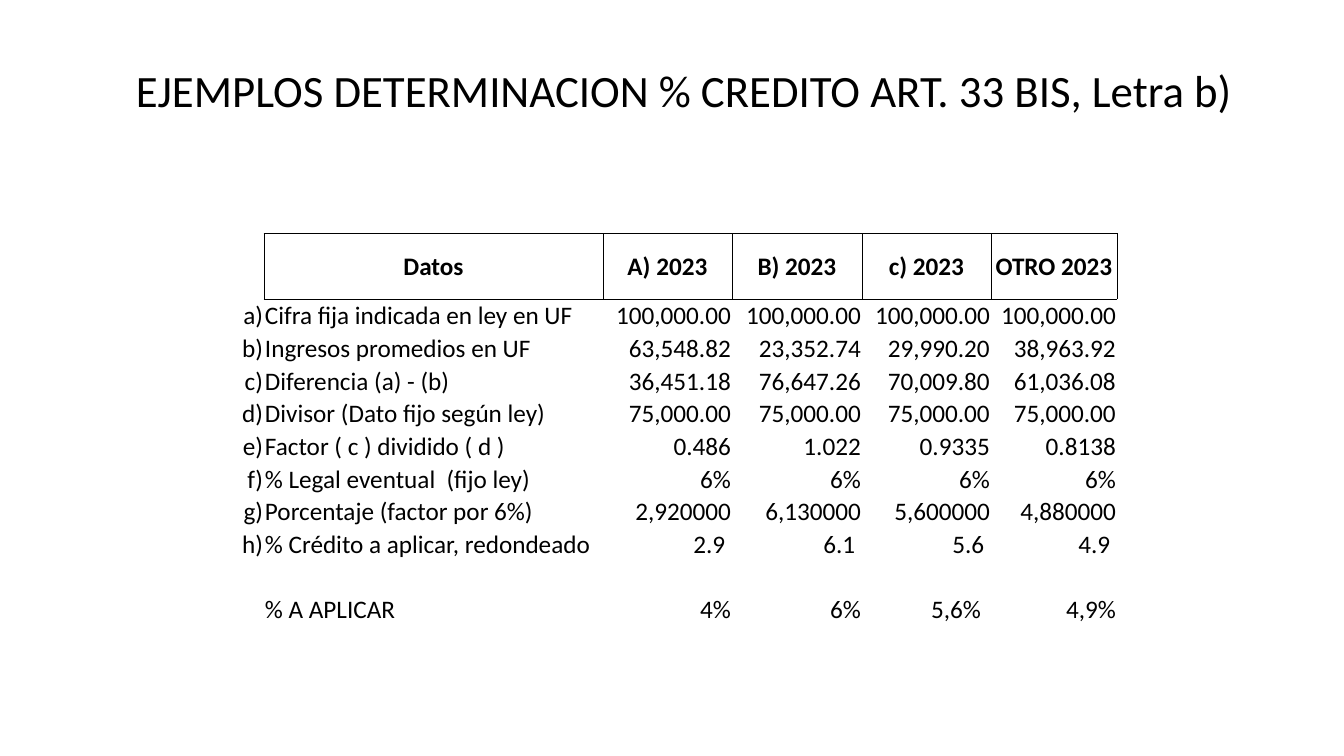
from dataclasses import dataclass

from lxml import etree
from pptx import Presentation
from pptx import util as u
from pptx.dml.color import RGBColor
from pptx.enum import text
from pptx.oxml.ns import qn


@dataclass(frozen=True)
class Theme:
    font: str = "Calibri"
    ink: str = "000000"
    title_size: int = 32
    lead_size: int = 44
    body_size: int = 18
    border: float = 0.5


HEADER = ["", "Datos", "A) 2023", "B) 2023", "c) 2023", "OTRO 2023"]
BODY = [
    ["a)", "Cifra fija indicada en ley en UF"] + ["100,000.00"] * 4,
    ["b)", "Ingresos promedios en UF", "63,548.82", "23,352.74", "29,990.20", "38,963.92"],
    ["c)", "Diferencia (a) - (b)", "36,451.18", "76,647.26", "70,009.80", "61,036.08"],
    ["d)", "Divisor (Dato fijo según ley)"] + ["75,000.00"] * 4,
    ["e)", "Factor ( c ) dividido ( d )", "0.486", "1.022", "0.9335", "0.8138"],
    ["f)", "% Legal eventual  (fijo ley)"] + ["6%"] * 4,
    ["g)", "Porcentaje (factor por 6%)", "2,920000", "6,130000", "5,600000", "4,880000"],
    ["h)", "% Crédito a aplicar, redondeado", "2.9 ", "6.1 ", "5.6 ", "4.9 "],
    [""] * 6,
    ["", "% A APLICAR", "4%", "6%", "5,6%", "4,9%"],
]
ROWS = [[""] * 6, HEADER] + BODY
HEADER_ROW = 1
LABEL_COLUMN = 1
COLUMN_WIDTHS = [32, 339, 129, 130, 129, 126]


def px(length):
    """Turn slide pixels into EMU."""
    return u.Emu(round(length * 914400 / 100.8))


class SlideBuilder:
    """Draw styled elements on the current slide."""

    def __init__(self, slide, theme):
        self.slide = slide
        self.theme = theme

    def style(self, span, size, bold=False):
        """Apply the theme font to one run."""
        span.font.name = self.theme.font
        span.font.size = u.Pt(size)
        span.font.bold = bold
        span.font.color.rgb = RGBColor.from_string(self.theme.ink)

    def title(self, words, left, top, width, height):
        """Add the heading with its larger leading space."""
        box = self.slide.shapes.add_textbox(px(left), px(top), px(width), px(height))
        frame = box.text_frame
        frame.word_wrap = True
        frame.vertical_anchor = text.MSO_ANCHOR.MIDDLE
        para = frame.paragraphs[0]
        para.line_spacing = 0.9
        for part, size in ((" ", self.theme.lead_size), (words, self.theme.title_size)):
            span = para.add_run()
            span.text = part
            self.style(span, size)

    def borders(self, cell, visible):
        """Draw the visible sides of a cell and hide the others."""
        properties = cell._tc.get_or_add_tcPr()
        for index, side in enumerate("LRTB"):
            line = etree.Element(qn(f"a:ln{side}"), w=str(u.Pt(self.theme.border)))
            if side in visible:
                fill = etree.SubElement(line, qn("a:solidFill"))
                etree.SubElement(fill, qn("a:srgbClr"), val=self.theme.ink)
            else:
                etree.SubElement(line, qn("a:noFill"))
            properties.insert(index, line)

    def cell(self, cell, words, align, header=False, right=1):
        """Fill one table cell."""
        cell.fill.background()
        cell.margin_left = cell.margin_top = px(1)
        cell.margin_right, cell.margin_bottom = px(right), 0
        anchors = text.MSO_ANCHOR
        cell.vertical_anchor = anchors.MIDDLE if header else anchors.BOTTOM
        para = cell.text_frame.paragraphs[0]
        para.alignment = align
        if words:
            para.text = words
            self.style(para.runs[0], self.theme.body_size, header)

    def table(self, rows, widths, left, top, height):
        """Add the table, with a header row twice as tall as the others."""
        frame = self.slide.shapes.add_table(
            len(rows), len(widths), px(left), px(top), px(sum(widths)), px(height))
        table = frame.table
        table.first_row = table.horz_banding = False
        for column, width in zip(table.columns, widths):
            column.width = px(width)
        unit = px(height) // (len(rows) + 1)
        aligns = text.PP_ALIGN
        for r, row in enumerate(rows):
            header = r == HEADER_ROW
            table.rows[r].height = unit * 2 if header else unit
            for c, words in enumerate(row):
                if header:
                    align = aligns.CENTER
                else:
                    align = aligns.LEFT if c == LABEL_COLUMN else aligns.RIGHT
                right = 10 if words == "5,6%" else 1
                self.cell(table.cell(r, c), words, align, header, right)
                if c >= LABEL_COLUMN:
                    visible = {0: "B", HEADER_ROW: "LRTB", HEADER_ROW + 1: "T"}.get(r, "")
                else:
                    visible = "R" if header else ""
                self.borders(table.cell(r, c), visible)


def main():
    """Build and save the slide."""
    deck = Presentation()
    deck.slide_width, deck.slide_height = px(1344), px(756)
    page = SlideBuilder(deck.slides.add_slide(deck.slide_layouts[6]), Theme())
    page.title("EJEMPLOS DETERMINACION % CREDITO ART. 33 BIS, Letra b)", 112, 40, 1139, 96)
    page.table(ROWS, COLUMN_WIDTHS, 232, 201, 425)
    deck.save("out.pptx")


if __name__ == "__main__":
    main()
